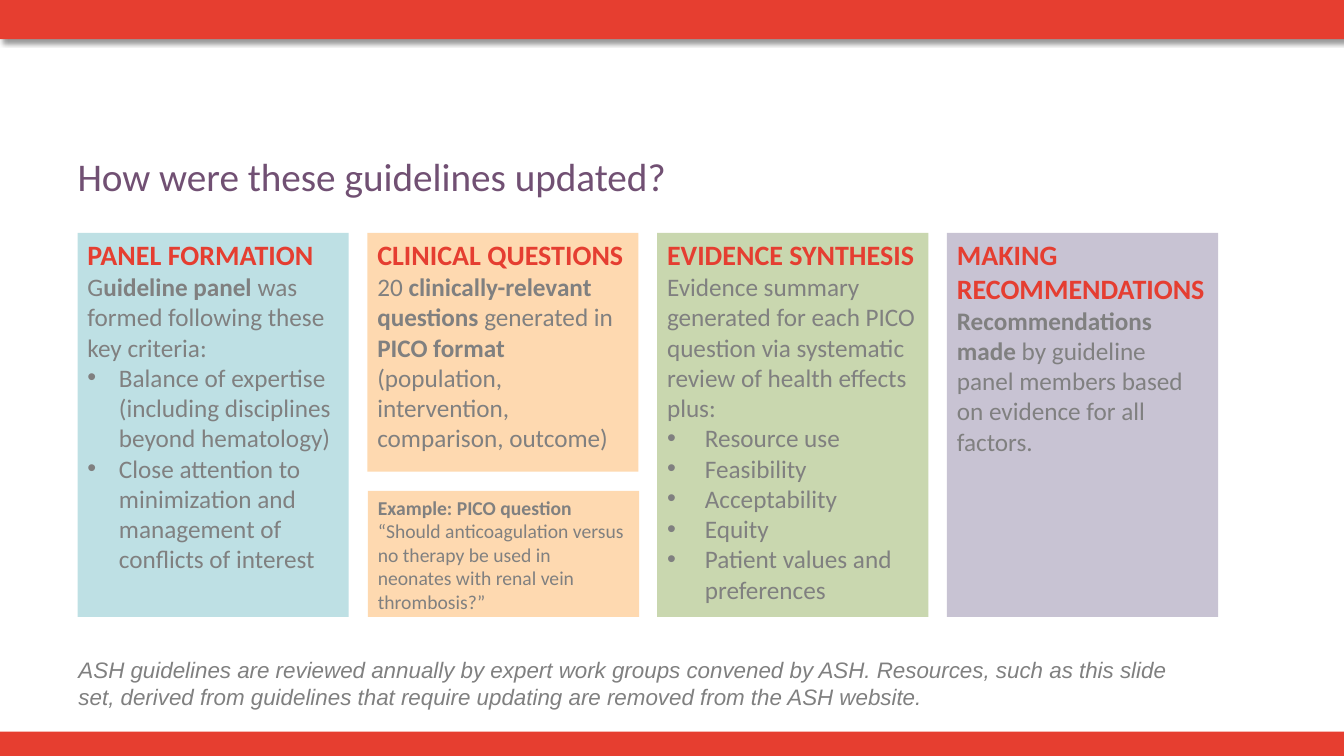
from dataclasses import dataclass

from lxml import etree
from pptx import Presentation
from pptx.dml.color import RGBColor
from pptx.enum.shapes import MSO_SHAPE
from pptx.enum.text import MSO_ANCHOR, PP_ALIGN
from pptx.oxml.ns import qn
from pptx.util import Pt

RECTANGLE = MSO_SHAPE.RECTANGLE
TOP = MSO_ANCHOR.TOP
LEFT = PP_ALIGN.LEFT

COLORS = {
    "red": "E63E30",
    "heading": "E53E31",
    "title": "715073",
    "gray": "808080",
    "blue": "BEE0E4",
    "orange": "FED9B0",
    "green": "C9D7AF",
    "purple": "8B80A3",
    "black": "000000",
}
SLIDE_WIDTH, SLIDE_HEIGHT = 960, 540
CARD_LEFT, CARD_TOP, CARD_WIDTH, CARD_HEIGHT = 55.4, 166.3, 193.7, 274.3
CARD_PITCH = 207
EXAMPLE_HEIGHT = 90


@dataclass(frozen=True)
class Box:
    left: float
    top: float
    width: float
    height: float

    def lengths(self) -> list:
        return [Pt(value) for value in (self.left, self.top, self.width, self.height)]


@dataclass(frozen=True)
class Style:
    size: float
    color: str
    name: str = "Calibri"
    italic: bool = False


@dataclass(frozen=True)
class Segment:
    text: str
    bold: bool = False


@dataclass(frozen=True)
class Line:
    segments: tuple
    style: Style
    indent: float = 0


@dataclass(frozen=True)
class Card:
    box: Box
    fill: str
    lines: tuple
    opacity: int = 100


HEADING = Style(20, "heading")
BODY = Style(18, "gray")
EXAMPLE = Style(14, "gray")
TITLE = Style(28, "title")
FOOTNOTE = Style(16, "gray", "Arial", True)


def heading(text: str) -> Line:
    return Line((Segment(text, True),), HEADING)


def plain(text: str, style: Style = BODY) -> Line:
    return Line((Segment(text),), style)


def bullets(indent: float, *texts: str) -> tuple:
    return tuple(Line((Segment(text),), BODY, indent) for text in texts)


def column(index: int, height: float = CARD_HEIGHT) -> Box:
    return Box(CARD_LEFT + index * CARD_PITCH, CARD_TOP, CARD_WIDTH, height)


CARDS = (
    Card(column(0), "blue", (
        heading("PANEL FORMATION"),
        Line((Segment("G"), Segment("uideline panel", True),
              Segment(" was formed following these key criteria:")), BODY),
        *bullets(22.5,
                 "Balance of expertise (including disciplines beyond hematology)",
                 "Close attention to minimization and management of conflicts of interest"),
    )),
    Card(column(1, 170.6), "orange", (
        heading("CLINICAL QUESTIONS"),
        Line((Segment("20 "), Segment("clinically-relevant questions ", True),
              Segment("generated in "), Segment("PICO format", True),
              Segment(" (population, intervention, comparison, outcome)")), BODY),
    )),
    Card(Box(CARD_LEFT + CARD_PITCH + 0.4, CARD_TOP + CARD_HEIGHT - EXAMPLE_HEIGHT,
             CARD_WIDTH, EXAMPLE_HEIGHT), "orange", (
        Line((Segment("Example: PICO question", True),), EXAMPLE),
        plain("“Should anticoagulation versus no therapy be used in neonates "
              "with renal vein thrombosis?”", EXAMPLE),
    )),
    Card(column(2), "green", (
        heading("EVIDENCE SYNTHESIS"),
        plain("Evidence summary generated for each PICO question via systematic "
              "review of health effects plus:"),
        *bullets(27, "Resource use", "Feasibility", "Acceptability", "Equity",
                 "Patient values and preferences"),
    )),
    Card(column(3), "purple", (
        heading("MAKING RECOMMENDATIONS"),
        Line((Segment("Recommendations made ", True),
              Segment("by guideline panel members based on evidence for all factors.")), BODY),
    ), 47),
)


def add_alpha(color_element, percent: int) -> None:
    etree.SubElement(color_element, qn("a:alpha"), val=str(percent * 1000))


def add_rectangle(slide, box: Box, fill: str, opacity: int = 100):
    shape = slide.shapes.add_shape(RECTANGLE, *box.lengths())
    shape.shadow.inherit = False
    shape.fill.solid()
    shape.fill.fore_color.rgb = RGBColor.from_string(COLORS[fill])
    shape.line.fill.background()
    if opacity < 100:
        add_alpha(shape.element.spPr.find(qn("a:solidFill"))[0], opacity)
    return shape


def add_shadow(shape) -> None:
    effects = shape.element.spPr.find(qn("a:effectLst"))
    shadow = etree.SubElement(effects, qn("a:outerShdw"), blurRad=str(Pt(4)),
                              dist=str(Pt(3)), dir=str(45 * 60000),
                              algn="tl", rotWithShape="0")
    color = etree.SubElement(shadow, qn("a:srgbClr"), val=COLORS["black"])
    add_alpha(color, 40)


def write_lines(shape, lines: tuple, **frame_format) -> None:
    frame = shape.text_frame
    for key, value in {"word_wrap": True, "vertical_anchor": TOP, **frame_format}.items():
        setattr(frame, key, value)
    for index, line in enumerate(lines):
        paragraph = frame.add_paragraph() if index else frame.paragraphs[0]
        paragraph.alignment = LEFT
        if line.indent:
            properties = paragraph._p.get_or_add_pPr()
            properties.set("marL", str(Pt(line.indent)))
            properties.set("indent", str(-Pt(line.indent)))
            etree.SubElement(properties, qn("a:buFont"), typeface="Arial")
            etree.SubElement(properties, qn("a:buChar"), char="•")
        for segment in line.segments:
            run = paragraph.add_run()
            run.text = segment.text
            font_format = {"name": line.style.name, "size": Pt(line.style.size),
                           "bold": segment.bold, "italic": line.style.italic}
            for key, value in font_format.items():
                setattr(run.font, key, value)
            run.font.color.rgb = RGBColor.from_string(COLORS[line.style.color])


def add_text(slide, box: Box, line: Line, **frame_format) -> None:
    write_lines(slide.shapes.add_textbox(*box.lengths()), (line,), **frame_format)


def main() -> None:
    presentation = Presentation()
    presentation.slide_width = Pt(SLIDE_WIDTH)
    presentation.slide_height = Pt(SLIDE_HEIGHT)
    slide = presentation.slides.add_slide(presentation.slide_layouts[6])

    add_rectangle(slide, Box(0, 522.5, SLIDE_WIDTH, 17.5), "red")
    add_shadow(add_rectangle(slide, Box(0, -0.7, SLIDE_WIDTH, 28.8), "red"))
    margins = ("margin_left", "margin_top", "margin_right", "margin_bottom")
    add_text(slide, Box(CARD_LEFT, 108.7, 864, 33.1),
             plain("How were these guidelines updated?", TITLE), **dict.fromkeys(margins, 0))
    for card in CARDS:
        write_lines(add_rectangle(slide, card.box, card.fill, card.opacity), card.lines)
    add_text(slide, Box(49, 465.1, 813.6, 46.1),
             plain("ASH guidelines are reviewed annually by expert work groups convened by ASH. "
                   "Resources, such as this slide set, derived from guidelines that require "
                   "updating are removed from the ASH website.", FOOTNOTE))
    presentation.save("out.pptx")


if __name__ == "__main__":
    main()
